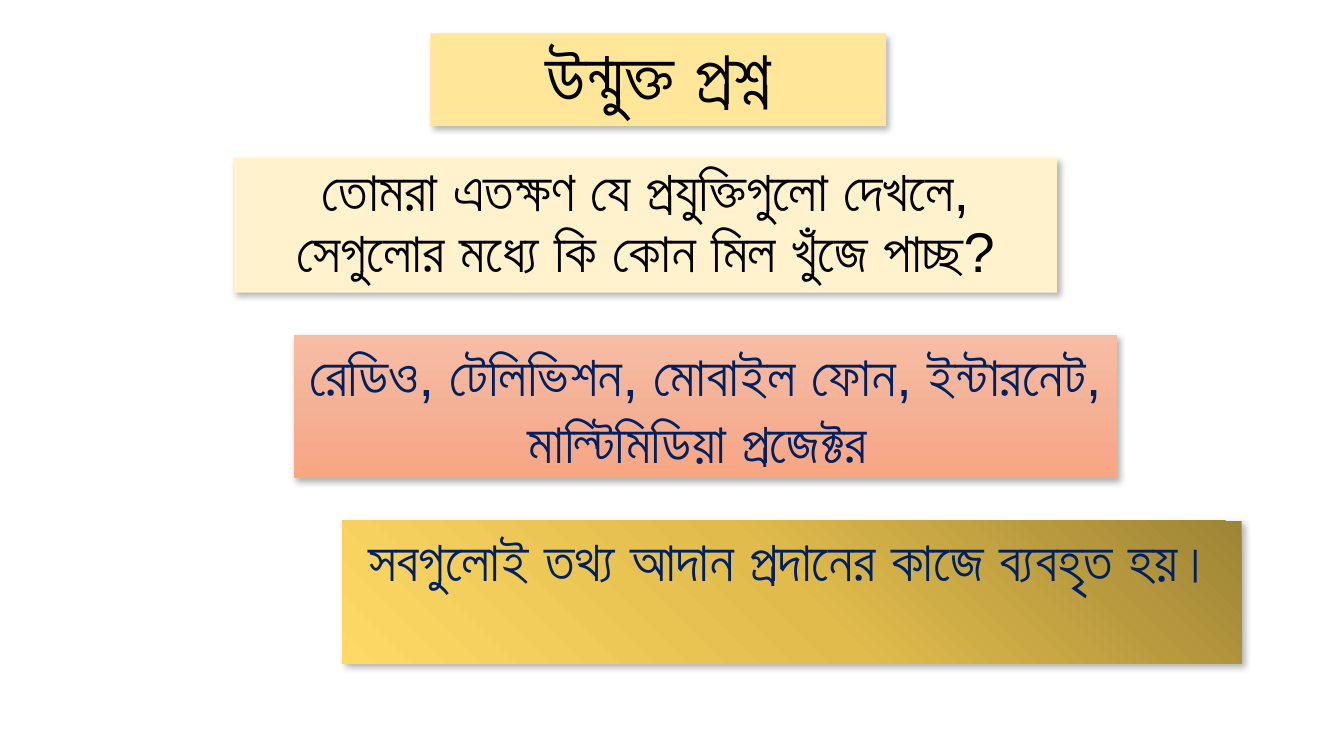
from lxml import etree
from pptx import Presentation
from pptx.dml.color import RGBColor
from pptx.enum.shapes import MSO_SHAPE
from pptx.enum.text import MSO_ANCHOR, MSO_AUTO_SIZE, PP_ALIGN
from pptx.oxml.ns import qn
from pptx.util import Pt

RECT = MSO_SHAPE.RECTANGLE
TOP, BOTTOM = MSO_ANCHOR.TOP, MSO_ANCHOR.BOTTOM
CENTER = PP_ALIGN.CENTER
NO_FIT = MSO_AUTO_SIZE.NONE

FONT = "Arial"
BLACK, NAVY = "000000", "002060"
SALMON = ["F7BDA5", "F5B196", "F8A582"]
GOLD = ["9E8436", "E1BC4C", "FFD966"]

TITLE = {"text": "উন্মুক্ত প্রশ্ন", "box": (307.4, 23.9, 325.5, 66.2),
         "fill": "FFE699", "size": 54, "color": BLACK, "line": 0.9}
PANELS = [
    {"text": "তোমরা এতক্ষণ যে প্রযুক্তিগুলো দেখলে, সেগুলোর মধ্যে কি কোন মিল খুঁজে পাচ্ছ?",
     "box": (167, 113, 588, 96), "fill": "FFF2CC", "size": 40,
     "color": BLACK, "line": 0.9, "before": 10},
    {"text": "রেডিও, টেলিভিশন, মোবাইল ফোন, ইন্টারনেট, মাল্টিমিডিয়া প্রজেক্টর ",
     "box": (209.8, 239.6, 588, 102), "gradient": SALMON, "angle": 90,
     "size": 40, "color": NAVY, "before_pct": 20},
    {"text": "সবগুলোই তথ্য আদান প্রদানের কাজে ব্যবহৃত হয়।",
     "box": (244.5, 372, 642.5, 102), "gradient": GOLD, "angle": 135,
     "size": 40, "color": NAVY, "before_pct": 20},
]


def rgb(color):
    return RGBColor.from_string(color)


def add_color(parent, color):
    return etree.SubElement(parent, qn("a:srgbClr"), val=color)


def paint(sp, item):
    if "fill" in item:
        sp.fill.solid()
        sp.fill.fore_color.rgb = rgb(item["fill"])
    else:
        sp.fill.gradient()
        sp.fill.gradient_angle = 360 - item["angle"]
        stops = sp.element.spPr.find(".//" + qn("a:gsLst"))
        for stop in list(stops):
            stops.remove(stop)
        for i, color in enumerate(item["gradient"]):
            add_color(etree.SubElement(stops, qn("a:gs"), pos=str(i * 50000)), color)
    sp.line.fill.background()


def add_shadow(sp):
    sp.shadow.inherit = False
    effects = sp.element.spPr.find(qn("a:effectLst"))
    shadow = etree.SubElement(effects, qn("a:outerShdw"), blurRad=str(Pt(4.5)),
                              dist=str(Pt(2.6)), dir=str(53 * 60000), rotWithShape="0")
    etree.SubElement(add_color(shadow, BLACK), qn("a:alpha"), val="30000")


def write(sp, item, anchor):
    tf = sp.text_frame
    tf.text = item["text"]
    tf.word_wrap = True
    tf.auto_size = NO_FIT
    tf.vertical_anchor = anchor
    p = tf.paragraphs[0]
    p.alignment = CENTER
    p.line_spacing = item.get("line", 1.0)
    p.space_before = Pt(item.get("before", 0))
    if "before_pct" in item:
        before = p._p.pPr.find(qn("a:spcBef"))
        before.remove(before[0])
        etree.SubElement(before, qn("a:spcPct"), val=str(item["before_pct"] * 1000))
    r = p.runs[0]
    r.font.size = Pt(item["size"])
    r.font.name = FONT
    r.font.color.rgb = rgb(item["color"])
    etree.SubElement(r._r.rPr, qn("a:cs"), typeface=FONT)


def main():
    prs = Presentation()
    prs.slide_width, prs.slide_height = Pt(960), Pt(540)
    s = prs.slides.add_slide(prs.slide_layouts[5])

    title = s.shapes.title
    title.left, title.top, title.width, title.height = map(Pt, TITLE["box"])
    panels = [s.shapes.add_shape(RECT, *map(Pt, item["box"])) for item in PANELS]

    for sp, item in zip([title] + panels, [TITLE] + PANELS):
        paint(sp, item)
        add_shadow(sp)
        write(sp, item, BOTTOM if sp is title else TOP)

    prs.save("out.pptx")


if __name__ == "__main__":
    main()
